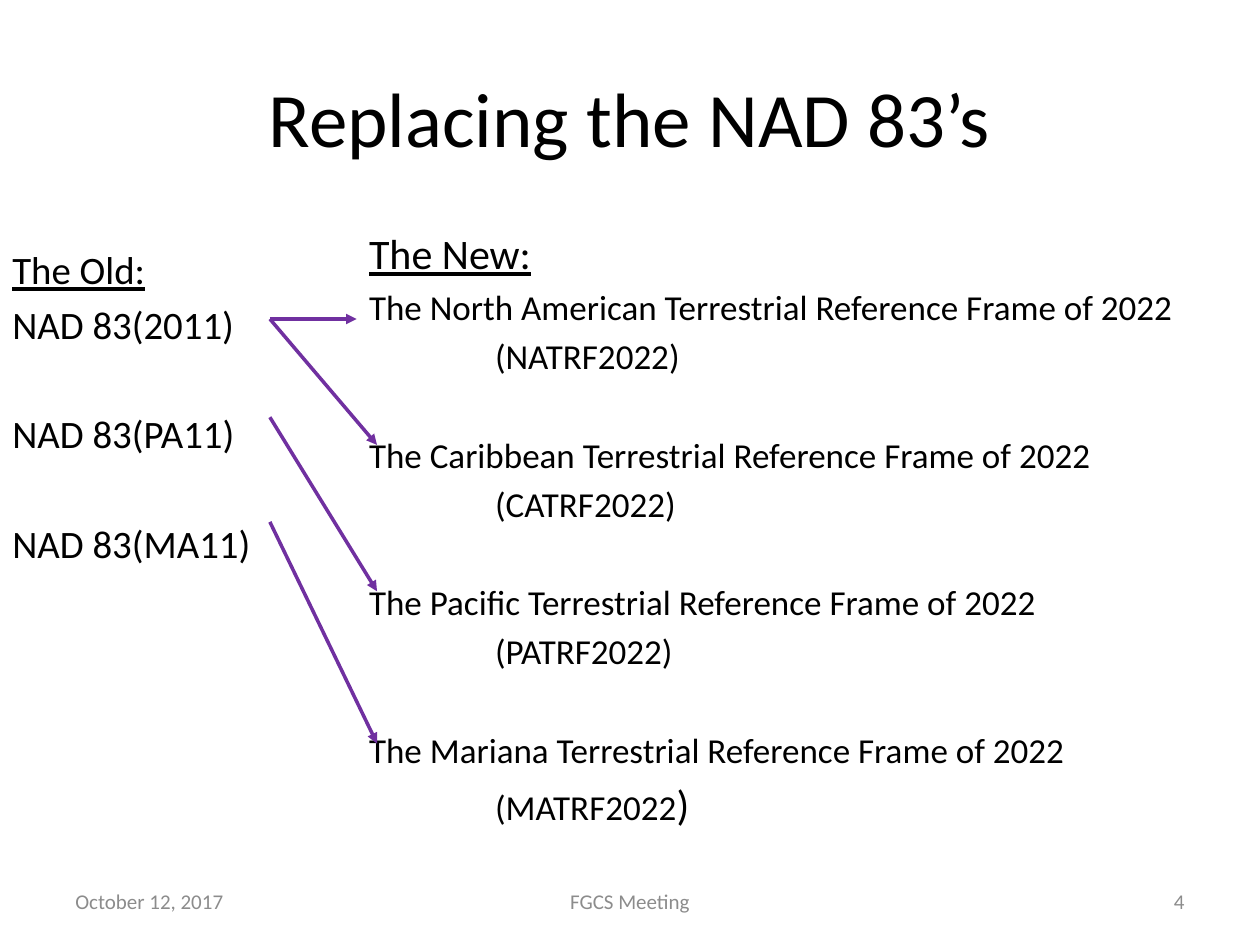
import pptx
import pptx.util
import pptx.dml.color
import pptx.enum.shapes
import pptx.enum.text
import pptx.oxml
import pptx.oxml.ns
from dataclasses import dataclass

Cm = pptx.util.Cm
Pt = pptx.util.Pt
Align = pptx.enum.text.PP_ALIGN
Anchor = pptx.enum.text.MSO_ANCHOR


@dataclass(frozen=True)
class Theme:
    face: str = "Calibri"
    ink: str = "000000"
    grey: str = "8C8C8C"
    arrow: str = "7030A0"
    title: float = 44
    old: float = 22.2
    head: float = 24
    item: float = 20
    foot: float = 12
    gap: float = 0.2  # space before, as a share of the type size
    line: float = 1.22  # line height, as a share of the type size


THEME = Theme()


def style(thing, form):
    for name, value in form.items():
        setattr(thing, name, value)


def frame(slide, box, anchor=Anchor.TOP):
    shape = slide.shapes.add_textbox(*(Cm(n) for n in box))
    style(shape.text_frame, {"word_wrap": True, "vertical_anchor": anchor})
    return shape.text_frame


def write(para, text, size, color=THEME.ink, under=False):
    run = para.add_run()
    run.text = text
    style(run.font, {"name": THEME.face, "size": Pt(size), "underline": under})
    run.font.color.rgb = pptx.dml.color.RGBColor.from_string(color)


def space(para, size, skip=False):
    """Set the space before; skip leaves one more line open."""
    step = THEME.gap * size
    para.space_before = Pt(step + (step + THEME.line * size if skip else 0))


def label(slide, box, text, size, color, align):
    """One line, centred by height in its box."""
    para = frame(slide, box, Anchor.MIDDLE).paragraphs[0]
    para.alignment = align
    write(para, text, size, color)


def old_list(slide, box):
    text = frame(slide, box)
    write(text.paragraphs[0], "The Old:", THEME.old, under=True)
    for i, name in enumerate(("2011", "PA11", "MA11")):
        para = text.add_paragraph()
        space(para, THEME.old, skip=i > 0)
        write(para, f"NAD 83({name})", THEME.old)


def new_list(slide, box):
    text = frame(slide, box)
    write(text.paragraphs[0], "The New:", THEME.head, under=True)
    frames = (("North American", "NATRF"), ("Caribbean", "CATRF"),
              ("Pacific", "PATRF"), ("Mariana", "MATRF"))
    for i, (place, code) in enumerate(frames):
        para = text.add_paragraph()
        space(para, THEME.item, skip=i > 0)
        write(para, f"The {place} Terrestrial Reference Frame of 2022", THEME.item)

        # Indented short name; the last bracket is larger
        close = THEME.head if i == len(frames) - 1 else THEME.item
        para = text.add_paragraph()
        para._p.get_or_add_pPr().set("marL", str(Cm(2.54)))
        space(para, close)
        write(para, f"({code}2022", THEME.item)
        write(para, ")", close)


def arrows(slide, box):
    left, top, wide, high = box
    # Start height, end reach and end height
    for start, reach, end in ((0, 1.75, 0), (0, wide, 2.54),
                              (1.98, wide, 5.49), (4.09, wide, high)):
        link = slide.shapes.add_connector(
            pptx.enum.shapes.MSO_CONNECTOR.STRAIGHT,
            Cm(left), Cm(top + start), Cm(left + reach), Cm(top + end))
        link.line.width = Pt(2)
        link.line.color.rgb = pptx.dml.color.RGBColor.from_string(THEME.arrow)
        tip = pptx.oxml.parse_xml(
            f'<a:tailEnd {pptx.oxml.ns.nsdecls("a")} type="triangle"/>')
        link.line._get_or_add_ln().append(tip)
        link._element.spPr.append(
            pptx.oxml.parse_xml(f'<a:effectLst {pptx.oxml.ns.nsdecls("a")}/>'))


def footer(slide, box):
    left, top, wide, high = box
    side, mid = 5.92, 8.05
    parts = ((0, side, "October 12, 2017", Align.LEFT),
             ((wide - mid) / 2, mid, "FGCS Meeting", Align.CENTER),
             (wide - side, side, "4", Align.RIGHT))
    for shift, width, text, align in parts:
        label(slide, (left + shift, top, width, high), text,
              THEME.foot, THEME.grey, align)


def main():
    deck = pptx.Presentation()
    style(deck, {"slide_width": Cm(25.4), "slide_height": Cm(19.05)})
    slide = deck.slides.add_slide(deck.slide_layouts[6])

    # Title
    label(slide, (1.27, 0.76, 22.86, 3.18), "Replacing the NAD 83’s",
          THEME.title, THEME.ink, Align.CENTER)
    # Old and new frames, and the arrows between them
    old_list(slide, (0, 4.83, 7.59, 6.55))
    new_list(slide, (7.19, 4.47, 17.58, 13.34))
    arrows(slide, (5.44, 6.43, 2.16, 8.56))
    # Footer
    footer(slide, (1.27, 17.65, 22.86, 1.02))

    deck.save("out.pptx")


if __name__ == "__main__":
    main()
